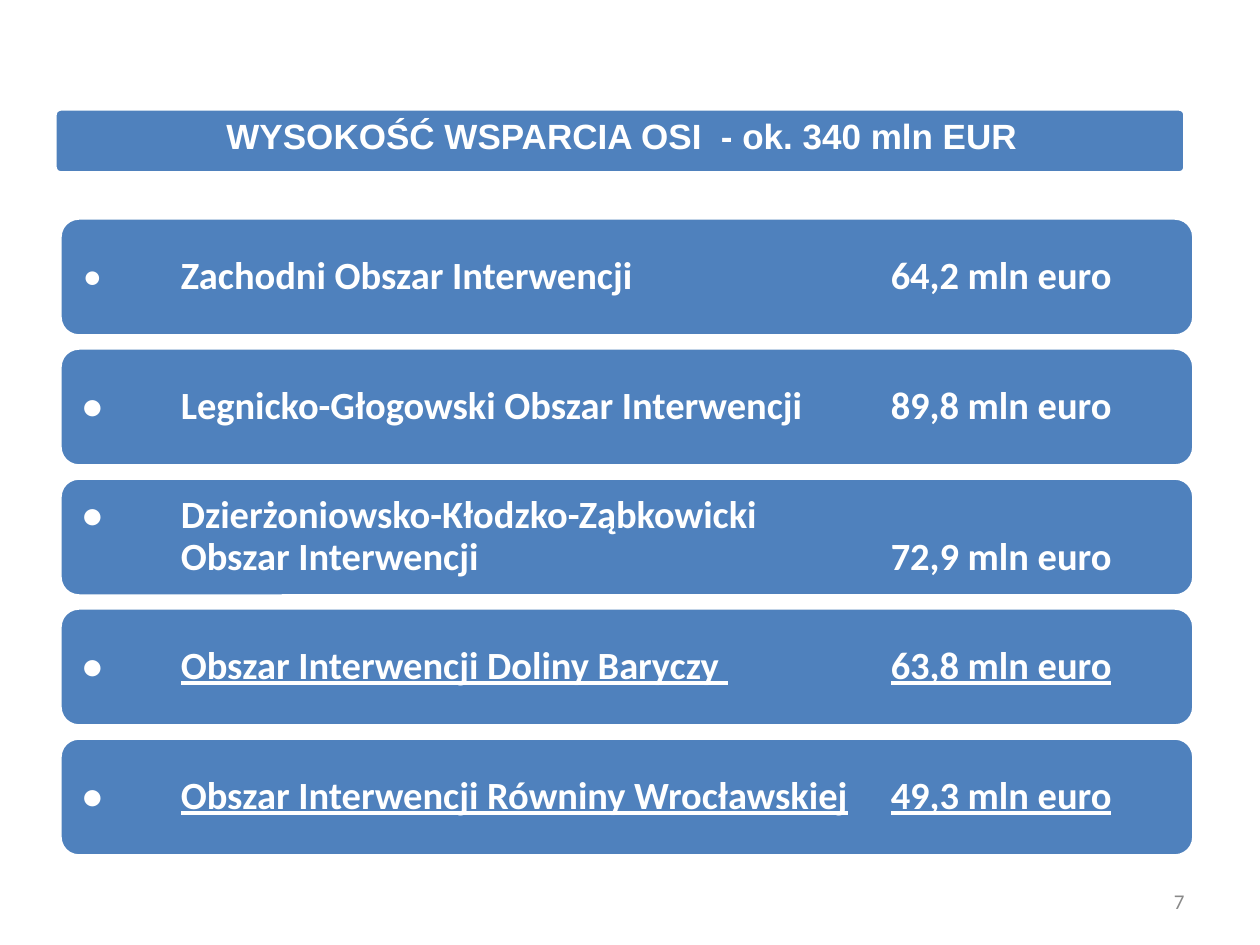
"""Build a slide listing the support for each intervention area."""
import pptx
import pptx.util
import pptx.dml.color
import pptx.enum.shapes
import pptx.enum.text
import pptx.oxml.ns
import lxml.etree

BLUE = pptx.dml.color.RGBColor(0x4F, 0x81, 0xBD)
WHITE = pptx.dml.color.RGBColor(0xFF, 0xFF, 0xFF)
GREY = pptx.dml.color.RGBColor(0x89, 0x89, 0x89)
SCALE = 914400 / 126
ALIGN = pptx.enum.text.PP_ALIGN
ANCHOR = pptx.enum.text.MSO_ANCHOR

TITLE = "WYSOKOŚĆ WSPARCIA OSI  - ok. 340 mln EUR"
NUMBER = "7"
AREAS = [
    (["Zachodni Obszar Interwencji"], "64,2 mln euro", False),
    (["Legnicko-Głogowski Obszar Interwencji"], "89,8 mln euro", False),
    (["Dzierżoniowsko-Kłodzko-Ząbkowicki", "Obszar Interwencji"], "72,9 mln euro", False),
    (["Obszar Interwencji Doliny Baryczy "], "63,8 mln euro", True),
    (["Obszar Interwencji Równiny Wrocławskiej"], "49,3 mln euro", True),
]
LEFT, TOP, WIDTH, HEIGHT, PITCH = 59, 217, 1136, 120, 130
INSET = 18
TABS = [98, 808]


def px(n):
    return pptx.util.Emu(round(n * SCALE))


def place(shape, left, top, width, height):
    shape.left, shape.top = px(left), px(top)
    shape.width, shape.height = px(width), px(height)


def add_run(para, text, size, color, font="Calibri", bold=True, under=None):
    run = para.add_run()
    run.text = text
    run.font.name, run.font.size = font, pptx.util.Pt(size)
    run.font.bold, run.font.underline = bold, under
    run.font.color.rgb = color


def add_bar(slide, left, top, width, height):
    kind = pptx.enum.shapes.MSO_SHAPE.ROUNDED_RECTANGLE
    bar = slide.shapes.add_shape(kind, px(left), px(top), px(width), px(height))
    bar.shadow.inherit = False
    bar.fill.solid()
    bar.fill.fore_color.rgb = BLUE
    bar.line.color.rgb = WHITE
    bar.line.width = pptx.util.Pt(3.15)
    return bar


def set_tabs(para):
    qn = pptx.oxml.ns.qn
    tabs = lxml.etree.SubElement(para._p.get_or_add_pPr(), qn("a:tabLst"))
    for stop in TABS:
        lxml.etree.SubElement(tabs, qn("a:tab"), pos=str(px(stop)), algn="l")


def add_area(slide, index, lines, amount, under):
    bar = add_bar(slide, LEFT, TOP + index * PITCH, WIDTH, HEIGHT)
    frame = bar.text_frame
    frame.word_wrap = True
    frame.vertical_anchor = ANCHOR.MIDDLE
    frame.margin_left = frame.margin_right = px(INSET)
    for row, line in enumerate(lines):
        para = frame.add_paragraph() if row else frame.paragraphs[0]
        para.alignment, para.line_spacing = ALIGN.LEFT, 0.9
        set_tabs(para)
        if row == 0:
            add_run(para, "•", 22, WHITE, bold=index > 0)
        add_run(para, "\t", 22, WHITE)
        add_run(para, line, 22, WHITE, under=under)
    add_run(para, "\t", 22, WHITE)
    add_run(para, amount, 22, WHITE, under=under)


def add_title(slide):
    bar = add_bar(slide, 54, 108, 1132, 66)
    bar.adjustments[0] = 0.1
    title = slide.shapes.title
    place(title, 58, 108, 1128, 97)
    slide.shapes._spTree.append(title._element)
    frame = title.text_frame
    frame.vertical_anchor = ANCHOR.TOP
    frame.auto_size = pptx.enum.text.MSO_AUTO_SIZE.NONE
    frame.paragraphs[0].alignment = ALIGN.CENTER
    add_run(frame.paragraphs[0], TITLE, 20, WHITE, font="Arial")


def add_number(slide):
    box = slide.shapes.add_textbox(px(903), px(876), px(294), px(50))
    frame = box.text_frame
    frame.word_wrap = True
    frame.vertical_anchor = ANCHOR.MIDDLE
    frame.paragraphs[0].alignment = ALIGN.RIGHT
    add_run(frame.paragraphs[0], NUMBER, 12, GREY, bold=False)


def main():
    deck = pptx.Presentation()
    deck.slide_width, deck.slide_height = px(1260), px(945)
    slide = deck.slides.add_slide(deck.slide_layouts[5])
    for index, area in enumerate(AREAS):
        add_area(slide, index, *area)
    add_title(slide)
    add_number(slide)
    deck.save("out.pptx")


if __name__ == "__main__":
    main()
